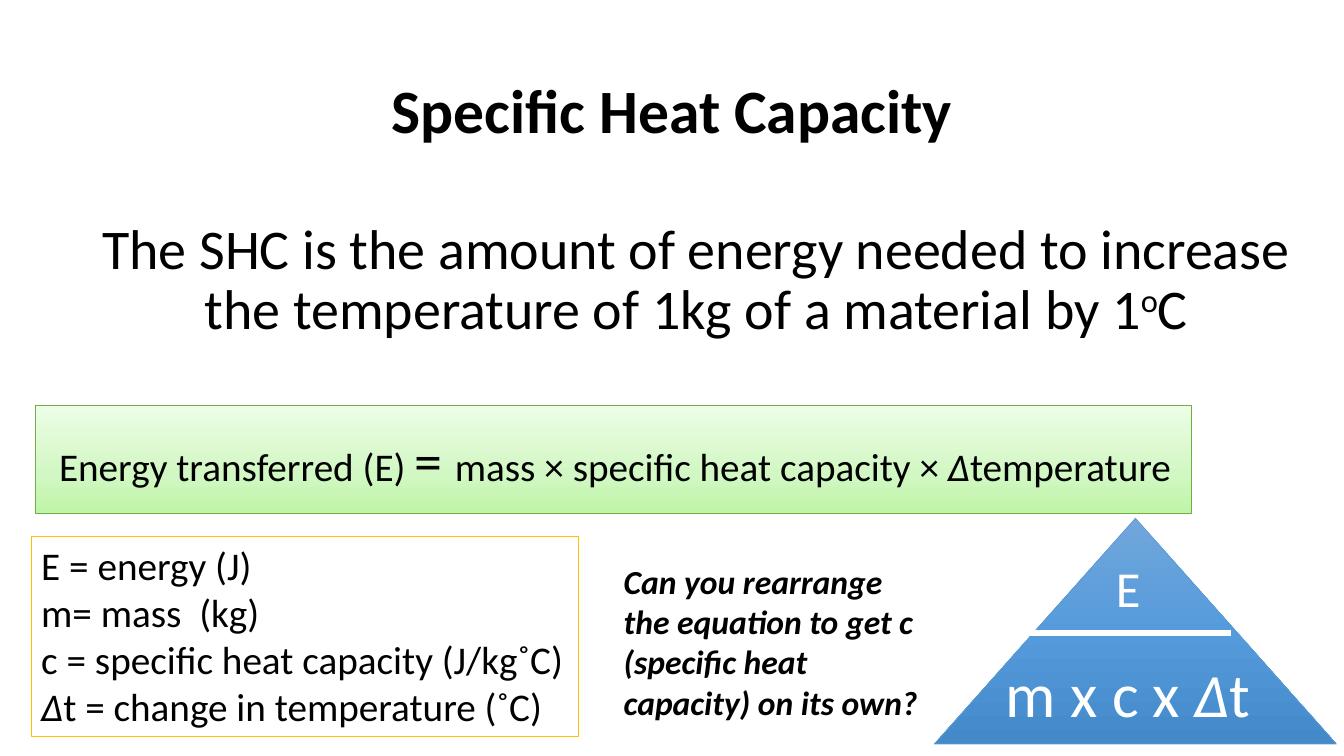
import copy
from dataclasses import dataclass

import pptx
import pptx.dml.color
import pptx.enum.shapes
import pptx.enum.text
import pptx.oxml
import pptx.oxml.ns
import pptx.util

Cm = pptx.util.Cm
Pt = pptx.util.Pt
Align = pptx.enum.text.PP_ALIGN
Anchor = pptx.enum.text.MSO_ANCHOR
Preset = pptx.enum.shapes.MSO_SHAPE


@dataclass
class Span:
    text: str
    size: float
    bold: bool = False
    italic: bool = False
    baseline: int = 0


@dataclass
class TextBlock:
    box: tuple[float, float, float, float]
    lines: list[list[Span]]
    align: Align = Align.LEFT
    color: str = "000000"
    spacing: float = 1.0
    anchor: Anchor = Anchor.TOP
    wrap: bool = True


@dataclass
class Panel:
    box: tuple[float, float, float, float]
    preset: Preset
    border: str
    border_width: float
    stops: tuple[tuple[int, str], ...] = ()
    angle: int = 0


def rgb(value: str) -> pptx.dml.color.RGBColor:
    return pptx.dml.color.RGBColor.from_string(value)


def draw_panel(slide, panel: Panel) -> None:
    shape = slide.shapes.add_shape(panel.preset, *map(Cm, panel.box))
    shape.shadow.inherit = False
    shape.line.color.rgb = rgb(panel.border)
    shape.line.width = Pt(panel.border_width)
    if not panel.stops:
        shape.fill.background()
        return
    shape.fill.gradient()
    shape.fill.gradient_angle = panel.angle
    stop_list = shape._element.spPr.find(".//" + pptx.oxml.ns.qn("a:gsLst"))
    stop_list.insert(1, copy.deepcopy(stop_list[0]))
    for stop, (position, color) in zip(shape.fill.gradient_stops, panel.stops):
        stop.position = position / 100
        stop.color.rgb = rgb(color)


def draw_text(slide, block: TextBlock) -> None:
    frame = slide.shapes.add_textbox(*map(Cm, block.box)).text_frame
    frame.word_wrap = block.wrap
    frame.vertical_anchor = block.anchor
    for index, spans in enumerate(block.lines):
        paragraph = frame.add_paragraph() if index else frame.paragraphs[0]
        paragraph.alignment = block.align
        paragraph.line_spacing = block.spacing
        for span in spans:
            run = paragraph.add_run()
            run.text = span.text
            run.font.name = "Calibri"
            run.font.size = Pt(span.size)
            run.font.bold = span.bold
            run.font.italic = span.italic
            run.font.color.rgb = rgb(block.color)
            if span.baseline:
                run._r.get_or_add_rPr().set("baseline", str(span.baseline * 1000))


def draw_divider(slide, left: float, right: float, y: float) -> None:
    divider = slide.shapes.add_connector(
        pptx.enum.shapes.MSO_CONNECTOR.STRAIGHT, Cm(left), Cm(y), Cm(right), Cm(y)
    )
    divider.line.color.rgb = rgb("FFFFFF")
    divider.line.width = Pt(4)
    divider._element.spPr.append(pptx.oxml.parse_xml(
        f"<a:effectLst {pptx.oxml.ns.nsdecls('a')}/>"
    ))


PANELS = [
    Panel((0.89, 10.21, 29.13, 2.74), Preset.RECTANGLE, "70AD47", 0.5,
          ((0, "BEF5A7"), (35, "D1F7C2"), (100, "EDFDE7")), 90),
    Panel((0.79, 13.51, 13.79, 5.05), Preset.RECTANGLE, "FFC000", 0.75),
    Panel((23.55, 13.06, 10.13, 5.69), Preset.ISOSCELES_TRIANGLE, "5B9BD5", 0.5,
          ((0, "71A6DB"), (50, "559BDB"), (100, "448ACA")), 270),
]

TEXTS = [
    TextBlock((2.34, 1.02, 29.21, 3.68),
              [[Span("Specific Heat Capacity", 44, bold=True)]],
              Align.CENTER, spacing=0.9, anchor=Anchor.MIDDLE),
    TextBlock((1.24, 5.44, 32.61, 3.4),
              [[Span("The SHC is the amount of energy needed to increase "
                     "the temperature of 1kg of a material by 1", 40),
                Span("o", 40, baseline=30), Span("C", 40)]],
              Align.CENTER, spacing=0.9),
    TextBlock((1.24, 10.8, 32.61, 1.8),
              [[Span("Energy transferred (E) ", 28), Span("= ", 40),
                Span("mass × specific heat capacity × ", 28),
                Span("∆", 28, italic=True), Span("temperature", 28)]],
              spacing=0.9),
    TextBlock((0.79, 13.51, 13.79, 5.05),
              [[Span("E = energy (J)", 28)],
               [Span("m= mass  (kg)", 28)],
               [Span("c = specific heat capacity (J/kg˚C)", 28)],
               [Span("∆", 28, italic=True),
                Span("t = change in temperature (˚C)", 28)]]),
    TextBlock((15.47, 14, 8.08, 4.37),
              [[Span("Can you rearrange the equation to get c "
                     "(specific heat capacity) on its own?", 24, True, True)]]),
    TextBlock((25.07, 16.38, 6.71, 2.18),
              [[Span("m x c x ", 45), Span("∆", 44, italic=True), Span("t", 44)]],
              Align.CENTER, "FFFFFF", wrap=False),
    TextBlock((27.86, 13.92, 1.14, 1.8), [[Span("E", 36)]],
              Align.CENTER, "FFFFFF", wrap=False),
]


def main() -> None:
    deck = pptx.Presentation()
    deck.slide_width = Cm(33.87)
    deck.slide_height = Cm(19.05)
    slide = deck.slides.add_slide(deck.slide_layouts[6])
    for panel in PANELS:
        draw_panel(slide, panel)
    draw_divider(slide, 25.86, 31.01, 15.95)
    for block in TEXTS:
        draw_text(slide, block)
    deck.save("out.pptx")


if __name__ == "__main__":
    main()
